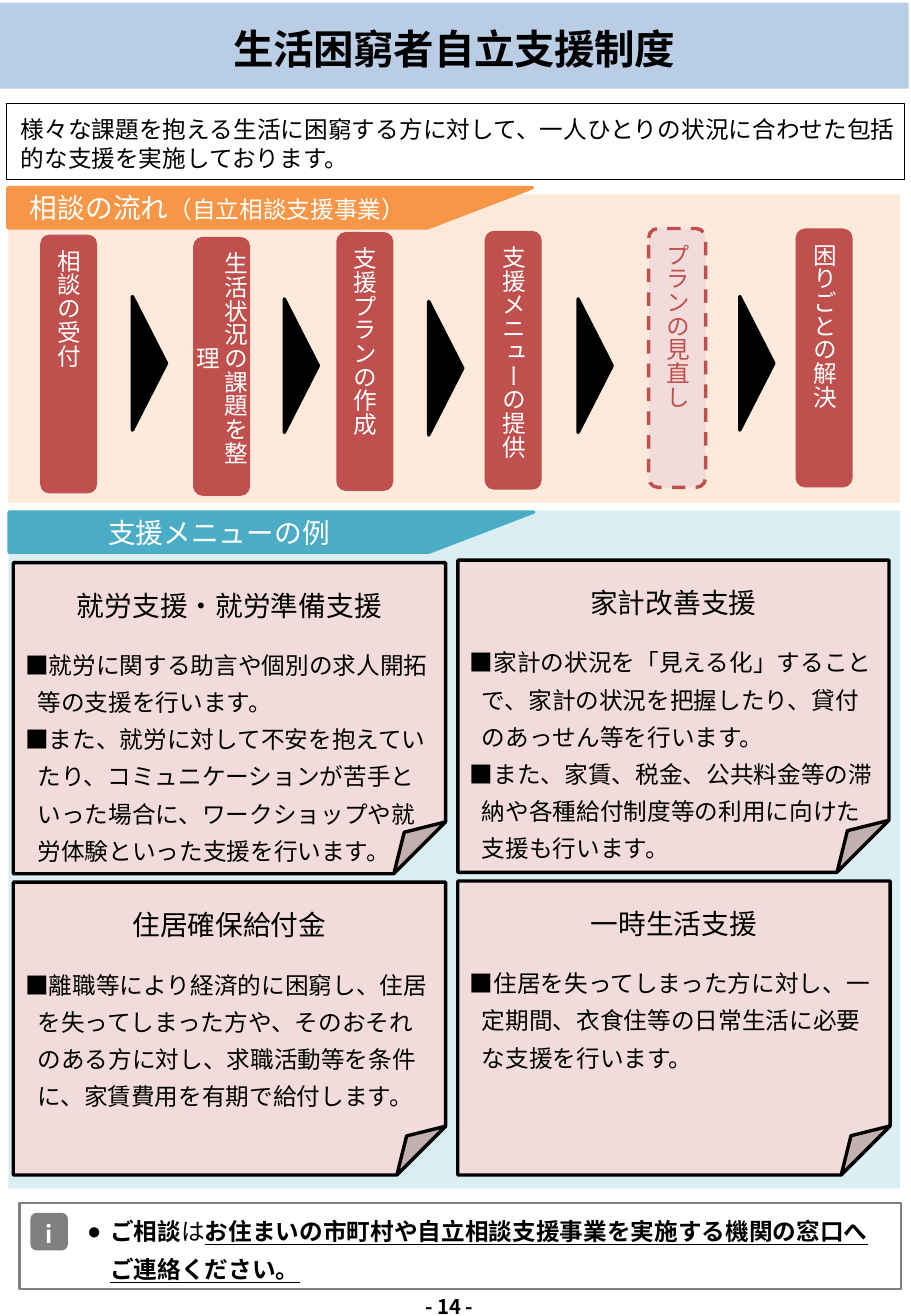
"""Build a one-page flyer on the self-reliance support system for people in need."""
from lxml import etree
from pptx import Presentation
from pptx.dml.color import RGBColor
from pptx.enum import dml, shapes, text
from pptx.oxml import ns
from pptx.util import Pt

FONT = "Noto Sans CJK JP"
COLORS = {
    "banner": "B9CDE5", "flow_panel": "FDEADA", "flow_tab": "F79646",
    "menu_panel": "DBEEF4", "menu_tab": "4BACC6", "card": "F2DCDB",
    "step": "C0504D", "grey": "808080", "black": "000000", "white": "FFFFFF",
}
KIND = shapes.MSO_SHAPE
ALIGN = text.PP_ALIGN
ANCHOR = text.MSO_ANCHOR

STEPS = [
    ("相談の受付", 23.8, 139),
    ("生活状況の課題を整理", 114.5, 140.4),
    ("支援プランの作成", 199.4, 137.5),
    ("支援メニューの提供", 287.3, 136.8),
    ("プランの見直し", 384.5, 135.4),
    ("困りごとの解決", 471.6, 135.4),
]
ARROWS = [(49, 205.2), (139, 206.6), (224.6, 208.1), (313.2, 206.6), (409, 205.2)]
CARDS = [
    ((7.9, 333.4, 256.3, 184.3), "就労支援・就労準備支援", [
        "■就労に関する助言や個別の求人開拓等の支援を行います。",
        "■また、就労に対して不安を抱えていたり、コミュニケーションが苦手といった場合に、"
        "ワークショップや就労体験といった支援を行います。"]),
    ((271.4, 331.9, 255.6, 185), "家計改善支援", [
        "■家計の状況を「見える化」することで、家計の状況を把握したり、貸付のあっせん等を行います。",
        "■また、家賃、税金、公共料金等の滞納や各種給付制度等の利用に向けた支援も行います。"]),
    ((7.9, 522.7, 256.3, 173.5), "住居確保給付金", [
        "■離職等により経済的に困窮し、住居を失ってしまった方や、そのおそれのある方に対し、"
        "求職活動等を条件に、家賃費用を有期で給付します。"]),
    ((271.4, 522, 256.3, 174.2), "一時生活支援", [
        "■住居を失ってしまった方に対し、一定期間、衣食住等の日常生活に必要な支援を行います。"]),
]


def rgb(name):
    """Return the named palette colour."""
    return RGBColor.from_string(COLORS[name])


def add_box(slide, kind, area, fill=None, line=None, width=2):
    """Add a preset shape with a plain fill and outline."""
    box = slide.shapes.add_shape(kind, *map(Pt, area))
    box.shadow.inherit = False
    if fill:
        box.fill.solid()
        box.fill.fore_color.rgb = rgb(fill)
    else:
        box.fill.background()
    if line:
        box.line.color.rgb = rgb(line)
        box.line.width = Pt(width)
    else:
        box.line.fill.background()
    return box


def frame_text(box, anchor=ANCHOR.MIDDLE, insets=(7.2, 3.6, 7.2, 3.6), vert=None):
    """Set wrapping, anchor, insets and direction of a text frame."""
    frame = box.text_frame
    frame.word_wrap = True
    frame.auto_size = text.MSO_AUTO_SIZE.NONE
    frame.vertical_anchor = anchor
    (frame.margin_left, frame.margin_top,
     frame.margin_right, frame.margin_bottom) = map(Pt, insets)
    if vert:
        frame._txBody.bodyPr.set("vert", vert)


def write(box, *runs, size=14, color="black", bold=False, align=ALIGN.LEFT,
          spacing=None, before=0, indent=0, hanging=0, bullet=None):
    """Write one paragraph of (words, overrides) runs and return it."""
    frame = box.text_frame
    paragraph = frame.paragraphs[-1]
    if paragraph.runs:
        paragraph = frame.add_paragraph()
    paragraph.alignment = align
    paragraph.line_spacing = Pt(spacing or round(size * 1.2, 1))
    paragraph.space_before = Pt(before)
    properties = paragraph._p.get_or_add_pPr()
    properties.set("marL", str(Pt(indent)))
    properties.set("indent", str(Pt(-hanging)))
    if bullet:
        etree.SubElement(properties, ns.qn("a:buFont")).set("typeface", "Arial")
        etree.SubElement(properties, ns.qn("a:buChar")).set("char", bullet)
    else:
        etree.SubElement(properties, ns.qn("a:buNone"))
    for words, own in runs:
        if words == "\v":
            paragraph.add_line_break()
            continue
        run = paragraph.add_run()
        run.text = words
        font = run.font
        font.name = FONT
        font.size = Pt(own.get("size", size))
        font.bold = own.get("bold", bold)
        font.underline = own.get("underline", False)
        font.color.rgb = rgb(color)
        east_asian = etree.SubElement(run._r.get_or_add_rPr(), ns.qn("a:ea"))
        east_asian.set("typeface", FONT)
    return paragraph


def add_title(slide, words):
    """Format the title placeholder as a banner."""
    title = slide.shapes.title
    title.left, title.top, title.width, title.height = map(Pt, (0, 1.5, 538.6, 51.1))
    title.fill.solid()
    title.fill.fore_color.rgb = rgb("banner")
    frame_text(title, insets=(5.8, 5.8, 5.8, 2.9))
    heading = write(title, (words, {}), size=24, bold=True, align=ALIGN.CENTER)
    heading.runs[0]._r.get_or_add_rPr().set("spc", "-20")


def add_tab(slide, left, top, color, *runs):
    """Add a section tab with a slanted right end."""
    tab = add_box(slide, KIND.FLOWCHART_MANUAL_INPUT, (left, top, 23.8, 311), color, color)
    tab.rotation = 90
    tab._element.spPr.xfrm.set("flipH", "1")
    frame_text(tab, vert="vert270")
    write(tab, *runs, size=16.4, color="white", align=ALIGN.CENTER)


def add_step(slide, words, left, top):
    """Add one vertical step of the consultation flow."""
    review = words == "プランの見直し"
    step = add_box(slide, KIND.ROUNDED_RECTANGLE, (left, top, 33.8, 153.4),
                   "card" if review else "step", "step" if review else None)
    if review:
        step.line.dash_style = dml.MSO_LINE.DASH
    frame_text(step, insets=(7.2,) * 4, vert="eaVert")
    write(step, (words, {}), color="step" if review else "white",
          align=ALIGN.CENTER if len(words) > 9 else ALIGN.LEFT)


def add_card(slide, area, heading, points):
    """Add a folded card with a heading and its points."""
    card = add_box(slide, KIND.FOLDED_CORNER, area, "card", "black")
    frame_text(card, ANCHOR.TOP, (7.2, 15.4, 7.2, 3.6))
    write(card, (heading, {}), size=16.4, align=ALIGN.CENTER)
    for number, point in enumerate(points):
        write(card, (point, {}), spacing=22, before=0 if number else 12,
              indent=7.2, hanging=7.2)


def add_contact(slide):
    """Add the contact box with its badge and message."""
    add_box(slide, KIND.RECTANGLE, (11.5, 712.8, 522.7, 51.1), None, "grey", 1.5)
    badge = add_box(slide, KIND.ROUNDED_RECTANGLE, (18, 718.6, 22.3, 22.3), "grey")
    frame_text(badge, insets=(2.9, 2.9, 2.9, 0))
    write(badge, ("i", {}), color="white", bold=True, align=ALIGN.CENTER)
    message = slide.shapes.add_textbox(*map(Pt, (44.6, 712, 490, 52)))
    frame_text(message, ANCHOR.TOP)
    write(message, ("ご相談", {}), ("は", {"bold": False}),
          ("お住まいの市町村や自立相談支援事業を実施する機関の窓口へ", {"underline": True}),
          ("\v", {}), ("ご連絡ください。", {"underline": True}),
          bold=True, spacing=22.5, indent=13.7, hanging=13.7, bullet="●")


def main():
    """Build and save the flyer."""
    deck = Presentation()
    deck.slide_width, deck.slide_height = Pt(540), Pt(779.76)
    slide = deck.slides.add_slide(deck.slide_layouts[5])
    add_title(slide, "生活困窮者自立支援制度")

    intro = add_box(slide, KIND.RECTANGLE, (3.6, 61.2, 532.8, 45.4), None, "black", 0.5)
    frame_text(intro, ANCHOR.TOP, (5.8, 7, 5.8, 2.9))
    write(intro, ("様々な課題を抱える生活に困窮する方に対して、一人ひとりの状況に合わせた"
                  "包括的な支援を実施しております。", {}), align=ALIGN.JUSTIFY, indent=2.9)

    add_box(slide, KIND.RECTANGLE, (5, 302.4, 528.5, 401.8), "menu_panel")
    add_tab(slide, 149, 159.8, "menu_tab", ("支援メニューの例", {}))
    for card in CARDS:
        add_card(slide, *card)

    add_box(slide, KIND.RECTANGLE, (5, 115.2, 528.5, 182.9), "flow_panel")
    add_tab(slide, 148.3, -32.4, "flow_tab", ("相談の流れ", {}),
            ("（自立相談支援事業）", {"size": 14}))
    for step in STEPS:
        add_step(slide, *step)
    for left, top in ARROWS:
        arrow = add_box(slide, KIND.ISOSCELES_TRIANGLE, (left, top, 79.2, 20.2),
                        "black", "black")
        arrow.rotation = 90

    add_contact(slide)
    page = slide.shapes.add_textbox(*map(Pt, (-3.6, 763.9, 540, 17.3)))
    frame_text(page, insets=(2.9, 2.9, 2.9, 0))
    write(page, ("- 14 -", {}), size=12, bold=True, align=ALIGN.CENTER)
    deck.save("out.pptx")


if __name__ == "__main__":
    main()
